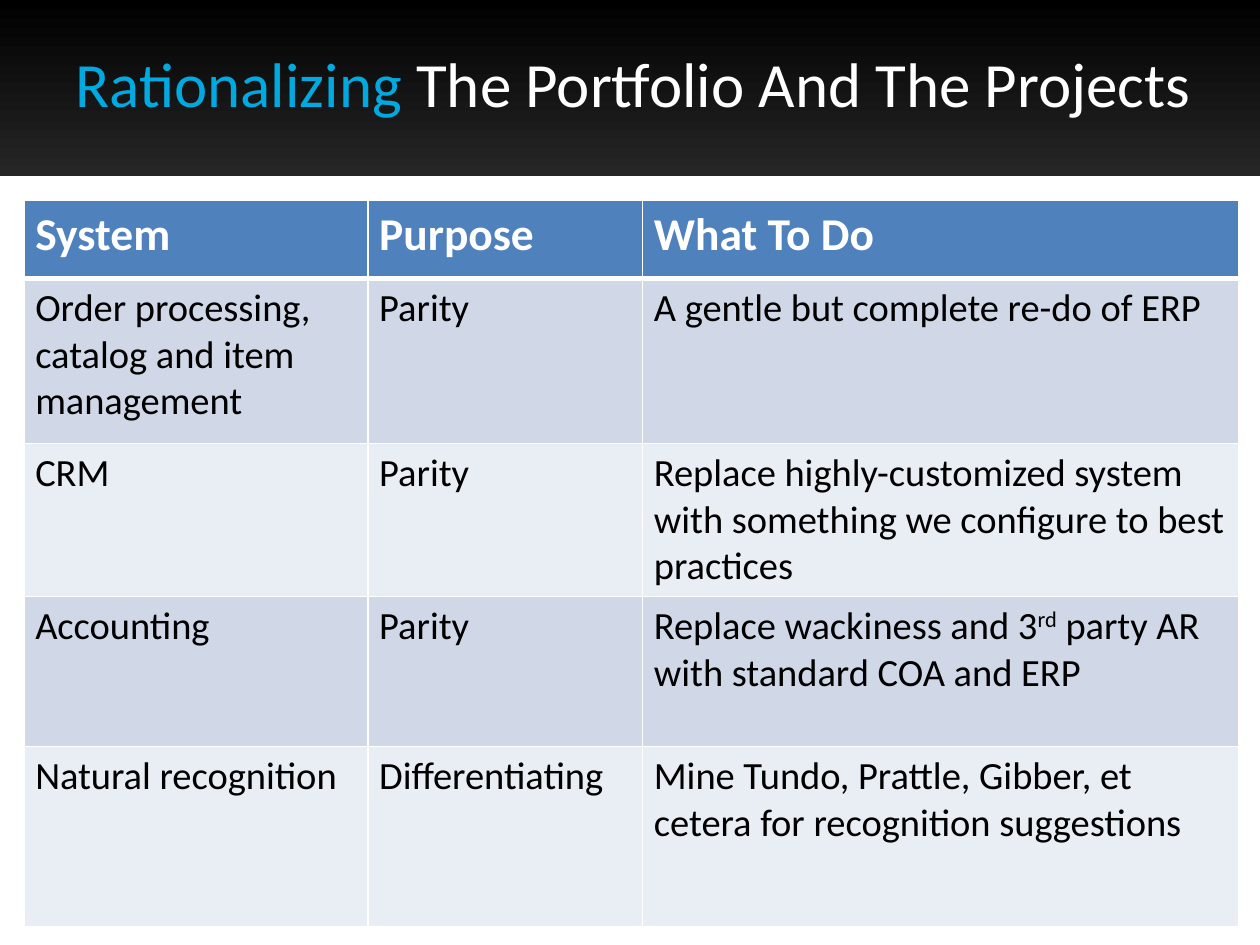
from lxml.etree import SubElement
from pptx import Presentation
from pptx.dml.color import RGBColor
from pptx.enum.shapes import MSO_SHAPE
from pptx.enum.text import MSO_ANCHOR, PP_ALIGN
from pptx.oxml.ns import qn
from pptx.util import Emu, Pt

EMU_PER_PX = 9144
FONT = "Calibri"
COLORS = {
    "band_top": "000000",
    "band_bottom": "262626",
    "accent": "00A9E0",
    "white": "FFFFFF",
    "ink": "000000",
    "header": "4F81BD",
    "odd_row": "D0D8E8",
    "even_row": "E9EDF4",
}
COLUMN_WIDTHS = [273, 218, 473]
ROW_HEIGHTS = [62, 131, 119, 119, 143]
SYSTEMS = [
    [["System"], ["Purpose"], ["What To Do"]],
    [["Order processing, catalog and item management"], ["Parity"],
     ["A gentle but complete re-do of ERP"]],
    [["CRM"], ["Parity"],
     ["Replace highly-customized system with something we configure to best practices"]],
    [["Accounting"], ["Parity"],
     ["Replace wackiness and 3", "rd", " party AR with standard COA and ERP"]],
    [["Natural recognition"], ["Differentiating"],
     ["Mine Tundo, Prattle, Gibber, et cetera for recognition suggestions"]],
]


def px(length):
    """Turn a length in px into EMU."""
    return Emu(length * EMU_PER_PX)


def color(name):
    """Look up a palette colour."""
    return RGBColor.from_string(COLORS[name])


def add_run(paragraph, text, size, color_name, bold=False):
    """Append a formatted run to a paragraph."""
    run = paragraph.add_run()
    run.text = text
    run.font.name = FONT
    run.font.size = Pt(size)
    run.font.bold = bold
    run.font.color.rgb = color(color_name)
    return run


def add_title_band(slide, left, top, width, height):
    """Place the gradient band and the two-colour title on it."""
    band = slide.shapes.add_shape(
        MSO_SHAPE.RECTANGLE, px(left), px(top), px(width), px(height))
    band.shadow.inherit = False
    band.line.fill.background()
    band.fill.gradient()
    band.fill.gradient_angle = 270
    for stop, name in zip(band.fill.gradient_stops, ["band_top", "band_bottom"]):
        stop.color.rgb = color(name)

    title = slide.shapes.title
    title.element.addprevious(band.element)
    title.left, title.top = px(left + 50), px(top + 30)
    title.width, title.height = px(width - 50), px(125)
    title.text_frame.word_wrap = True
    title.text_frame.vertical_anchor = MSO_ANCHOR.TOP
    heading = title.text_frame.paragraphs[0]
    heading.alignment = PP_ALIGN.LEFT
    add_run(heading, "Rationalizing", 36, "accent")
    add_run(heading, " The Portfolio And The Projects", 36, "white")


def set_borders(cell, widths):
    """Draw white borders of the given point widths, keyed by side."""
    properties = cell._tc.get_or_add_tcPr()
    for side, width in widths.items():
        border = SubElement(properties, qn(f"a:ln{side}"), w=str(Pt(width)))
        fill = SubElement(border, qn("a:solidFill"))
        SubElement(fill, qn("a:srgbClr"), val=COLORS["white"])


def fill_cell(cell, pieces, row_index):
    """Write one cell, raising every second piece as superscript."""
    is_header = row_index == 0
    set_borders(cell, {"L": 1, "R": 1, "T": 3 if row_index == 1 else 1,
                       "B": 3 if is_header else 1})
    cell.fill.solid()
    row_color = "odd_row" if row_index % 2 else "even_row"
    cell.fill.fore_color.rgb = color("header" if is_header else row_color)
    cell.margin_left = cell.margin_right = px(9)
    cell.margin_top = cell.margin_bottom = px(5)
    for index, piece in enumerate(pieces):
        run = add_run(cell.text_frame.paragraphs[0], piece, 26 if is_header else 22,
                      "white" if is_header else "ink", is_header)
        if index % 2:
            run._r.get_or_add_rPr().set("baseline", "30000")


def add_systems_table(slide, left, top):
    """Place the table of systems, purposes and actions."""
    table = slide.shapes.add_table(
        len(SYSTEMS), len(COLUMN_WIDTHS), px(left), px(top),
        px(sum(COLUMN_WIDTHS)), px(sum(ROW_HEIGHTS))).table
    for column, width in zip(table.columns, COLUMN_WIDTHS):
        column.width = px(width)
    for row_index, (row, height) in enumerate(zip(table.rows, ROW_HEIGHTS)):
        row.height = px(height)
        for cell, pieces in zip(row.cells, SYSTEMS[row_index]):
            fill_cell(cell, pieces, row_index)


def main():
    """Build the slide and save it."""
    presentation = Presentation()
    presentation.slide_width, presentation.slide_height = px(1000), px(750)
    slide = presentation.slides.add_slide(presentation.slide_layouts[5])
    add_title_band(slide, 0, 0, 1000, 140)
    add_systems_table(slide, 19, 159)
    presentation.save("out.pptx")


if __name__ == "__main__":
    main()
